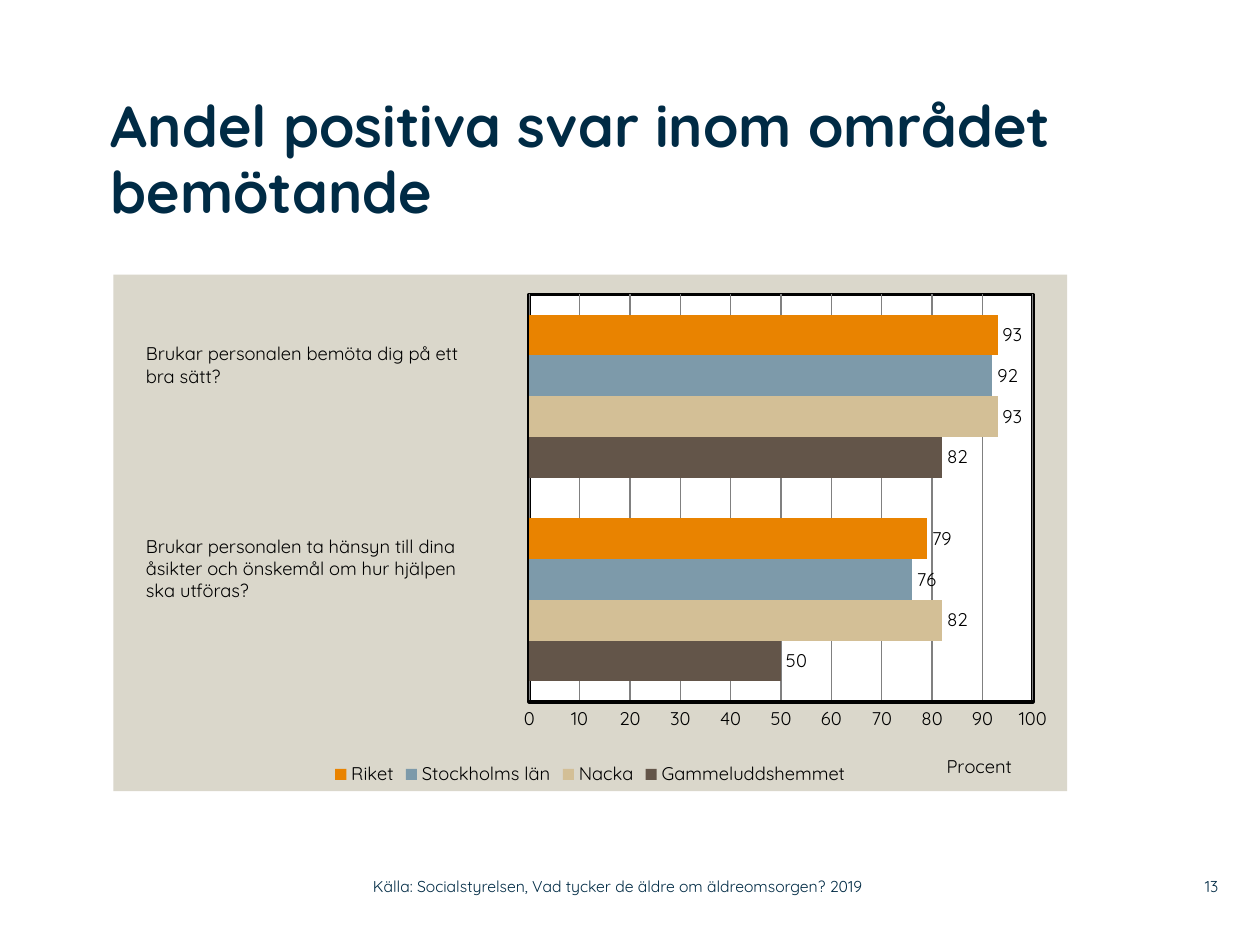
from lxml import etree
from pptx import Presentation
from pptx.chart.data import CategoryChartData
from pptx.dml.color import RGBColor
from pptx.enum.chart import XL_CHART_TYPE, XL_LABEL_POSITION, XL_LEGEND_POSITION, XL_TICK_MARK
from pptx.enum.text import MSO_ANCHOR, PP_ALIGN
from pptx.oxml import parse_xml
from pptx.oxml.ns import nsdecls, qn
from pptx.util import Inches, Pt

BAR_CLUSTERED = XL_CHART_TYPE.BAR_CLUSTERED
OUTSIDE_END = XL_LABEL_POSITION.OUTSIDE_END
LEGEND_BOTTOM = XL_LEGEND_POSITION.BOTTOM
NO_TICK = XL_TICK_MARK.NONE
TOP, MIDDLE = MSO_ANCHOR.TOP, MSO_ANCHOR.MIDDLE
LEFT, RIGHT = PP_ALIGN.LEFT, PP_ALIGN.RIGHT

FONT = "Quicksand"
NAVY = RGBColor(0x00, 0x2B, 0x45)
BLACK = RGBColor(0x00, 0x00, 0x00)
WHITE = RGBColor(0xFF, 0xFF, 0xFF)
GRAY = RGBColor(0x80, 0x80, 0x80)
SAND = RGBColor(0xDA, 0xD7, 0xCB)
BROWN = RGBColor(0x63, 0x55, 0x49)
BEIGE = RGBColor(0xD3, 0xBF, 0x96)
BLUE = RGBColor(0x7D, 0x9A, 0xAA)
ORANGE = RGBColor(0xE9, 0x83, 0x00)

RESULTS = [
    ("Gammeluddshemmet", (50, 82), BROWN),
    ("Nacka", (82, 93), BEIGE),
    ("Stockholms län", (76, 92), BLUE),
    ("Riket", (79, 93), ORANGE),
]


def add_text(slide, box, lines, size, color, bold=False, align=LEFT,
             anchor=TOP, inset=True, spacing=None):
    frame = slide.shapes.add_textbox(*map(Inches, box)).text_frame
    frame.word_wrap = True
    frame.vertical_anchor = anchor
    if not inset:
        frame.margin_left = frame.margin_top = 0
        frame.margin_right = frame.margin_bottom = 0
    for index, line in enumerate(lines):
        paragraph = frame.add_paragraph() if index else frame.paragraphs[0]
        paragraph.alignment = align
        if spacing:
            paragraph.line_spacing = spacing
        run = paragraph.add_run()
        run.text = line
        style_font(run.font, size, color, bold)


def style_font(font, size, color, bold=False):
    font.name = FONT
    font.size = Pt(size)
    font.bold = bold
    font.color.rgb = color


def manual_layout(parent, index, **values):
    for old in parent.findall(qn("c:layout")):
        parent.remove(old)
    layout = etree.Element(qn("c:layout"))
    manual = etree.SubElement(layout, qn("c:manualLayout"))
    for tag, value in values.items():
        etree.SubElement(manual, qn(f"c:{tag}")).set("val", str(value))
    parent.insert(index, layout)


def area_format(fill, outline):
    return parse_xml(
        f'<c:spPr {nsdecls("c", "a")}><a:solidFill><a:srgbClr val="{fill}"/></a:solidFill>'
        f'{outline}</c:spPr>')


def style_value_axis(axis):
    axis.minimum_scale, axis.maximum_scale, axis.major_unit = 0, 100, 10
    axis.major_tick_mark = axis.minor_tick_mark = NO_TICK
    axis.format.line.color.rgb = BLACK
    axis.format.line.width = Pt(2)
    axis.has_major_gridlines = True
    axis.major_gridlines.format.line.color.rgb = GRAY
    axis.major_gridlines.format.line.width = Pt(0.75)
    style_font(axis.tick_labels.font, 10.5, BLACK)
    axis.has_title = True
    unit = axis.axis_title.text_frame.paragraphs[0].add_run()
    unit.text = "Procent"
    style_font(unit.font, 10.5, BLACK)
    manual_layout(axis.axis_title._element, 1, xMode="edge", yMode="edge", x=0.87, y=0.92)


def add_results_chart(slide, box):
    data = CategoryChartData()
    data.categories = ["1", "2"]
    for name, values, _ in RESULTS:
        data.add_series(name, values)
    chart = slide.shapes.add_chart(BAR_CLUSTERED, *map(Inches, box), data).chart
    style_font(chart.font, 10.5, BLACK)
    chart.has_title = False
    chart.has_legend = True
    chart.legend.position = LEGEND_BOTTOM
    chart.legend.include_in_layout = False
    style_font(chart.legend.font, 10.5, BLACK)
    chart.category_axis.visible = False
    style_value_axis(chart.value_axis)

    plot = chart.plots[0]
    plot.gap_width = 100
    plot.overlap = 0
    plot.vary_by_categories = False
    for series, (_, _, color) in zip(plot.series, RESULTS):
        series.format.fill.solid()
        series.format.fill.fore_color.rgb = color
        labels = series.data_labels
        labels.show_value = True
        labels.position = OUTSIDE_END
        style_font(labels.font, 10.5, BLACK)

    chart_root = chart._chartSpace.find(qn("c:chart"))
    plot_area = chart_root.find(qn("c:plotArea"))
    manual_layout(plot_area, 0, layoutTarget="inner", xMode="edge", yMode="edge",
                  x=0.436, y=0.038, w=0.528, h=0.789)
    frame_line = f'<a:ln w="{Pt(2)}"><a:solidFill><a:srgbClr val="{BLACK}"/></a:solidFill></a:ln>'
    plot_area.append(area_format(WHITE, frame_line))
    chart_root.addnext(area_format(SAND, "<a:ln><a:noFill/></a:ln>"))


def add_questions(slide, left, width):
    add_text(slide, (left, 2.67, width, 0.45),
             ["Brukar personalen bemöta dig på ett", "bra sätt?"], 10.5, BLACK)
    add_text(slide, (left, 4.2, width, 0.63),
             ["Brukar personalen ta hänsyn till dina",
              "åsikter och önskemål om hur hjälpen", "ska utföras?"], 10.5, BLACK)


def add_footer(slide, top, height):
    add_text(slide, (2.96, top, 4.43, height),
             ["Källa: Socialstyrelsen, Vad tycker de äldre om äldreomsorgen? 2019"],
             9, NAVY, anchor=MIDDLE, inset=False)
    add_text(slide, (9.2, top, 0.47, height), ["13"], 9, NAVY,
             align=RIGHT, anchor=MIDDLE, inset=False)


def main():
    deck = Presentation()
    deck.slide_width, deck.slide_height = Inches(10), Inches(7.5)
    slide = deck.slides.add_slide(deck.slide_layouts[6])
    add_results_chart(slide, (0.9, 2.18, 7.57, 4.1))
    add_text(slide, (0.88, 0.75, 7.6, 1.42),
             ["Andel positiva svar inom området bemötande"], 33, NAVY,
             bold=True, inset=False, spacing=0.95)
    add_questions(slide, 1.06, 2.98)
    add_footer(slide, 6.89, 0.29)
    deck.save("out.pptx")


if __name__ == "__main__":
    main()
